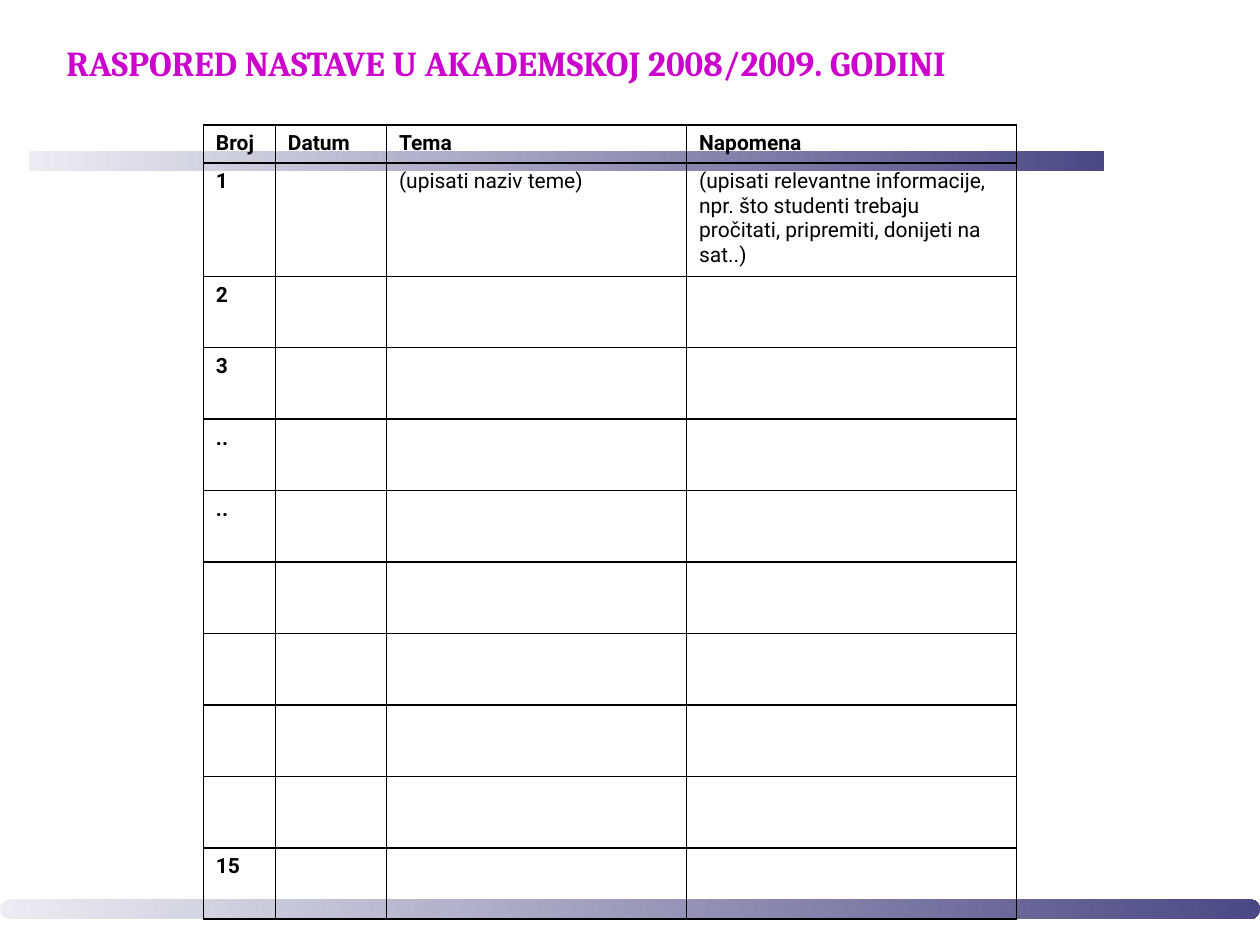
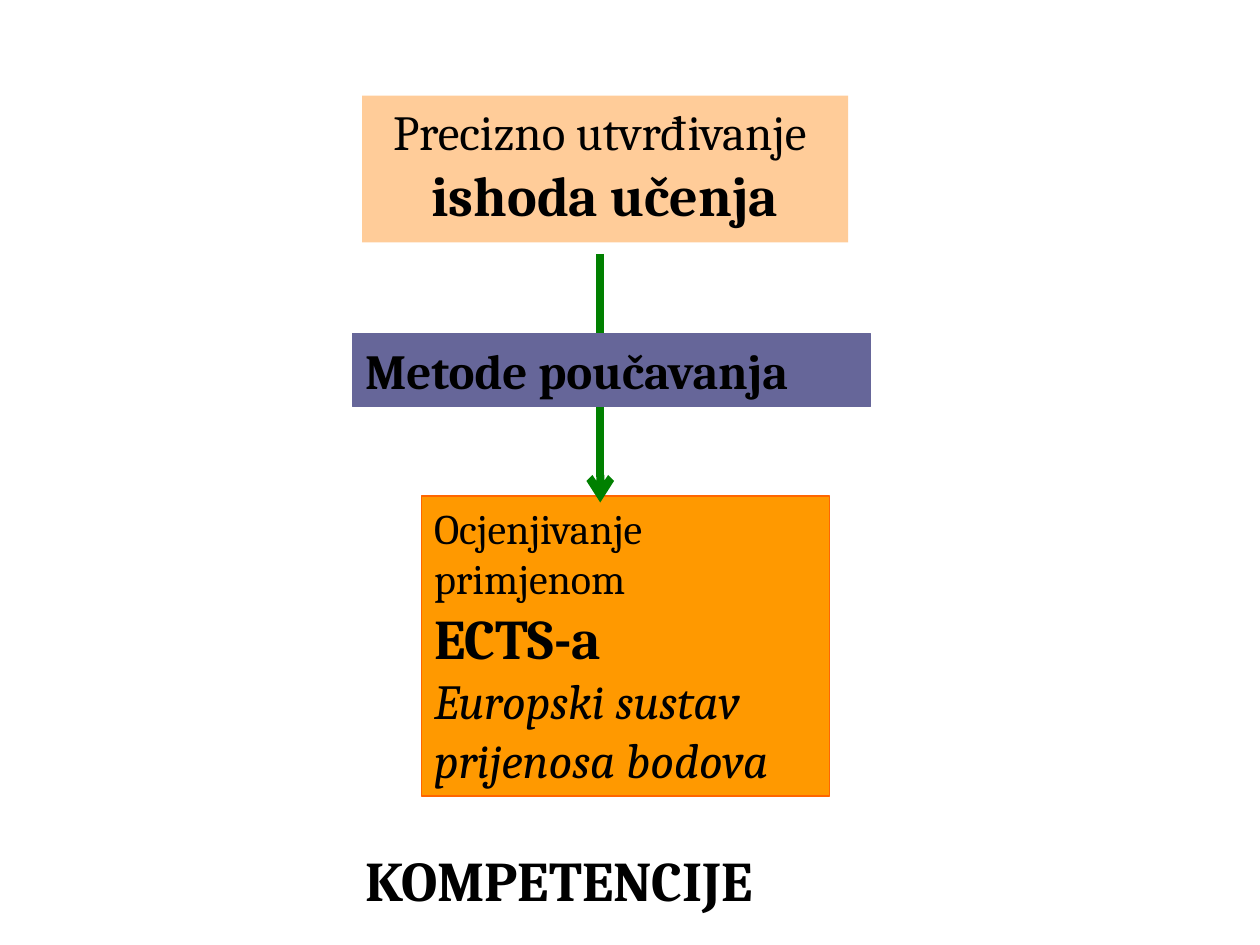
import pptx
import pptx.util
import pptx.dml.color
import pptx.enum.shapes
import pptx.enum.text
import pptx.oxml
import pptx.oxml.ns
from lxml import etree

Cm, Pt = pptx.util.Cm, pptx.util.Pt
RGB = pptx.dml.color.RGBColor
SHAPES = pptx.enum.shapes.MSO_SHAPE
ALIGN = pptx.enum.text.PP_ALIGN
ANCHOR = pptx.enum.text.MSO_ANCHOR
qn = pptx.oxml.ns.qn

BLACK = RGB(0, 0, 0)
MAGENTA = RGB(0xCC, 0x00, 0xCC)
BAND_LIGHT = RGB(0xED, 0xEC, 0xF2)
BAND_DARK = RGB(0x4C, 0x48, 0x84)
ORANGE = RGB(0xFF, 0x99, 0x00)
ORANGE_EDGE = RGB(0xFF, 0x66, 0x00)
PEACH = RGB(0xFF, 0xCC, 0x99)
VIOLET = RGB(0x66, 0x66, 0x99)
GREEN = RGB(0x00, 0x80, 0x00)
SERIF, SANS = "Cambria", "Roboto"

# Content: the schedule
TITLE = "RASPORED NASTAVE U AKADEMSKOJ 2008/2009. GODINI"
HEADER = ["Broj", "Datum", "Tema", "Napomena"]
FIRST_CLASS = ["1", "", "(upisati naziv teme)",
               "(upisati relevantne informacije, npr. što studenti trebaju "
               "pročitati, pripremiti, donijeti na sat..)"]
OTHER_NUMBERS = ["2", "3", "..", "..", "", "", "", "", "15"]
SCHEDULE = [HEADER, FIRST_CLASS] + [[n, "", "", ""] for n in OTHER_NUMBERS]
COL_WIDTHS = [1.45, 2.24, 6.05, 6.65]
ROW_HEIGHTS = [0.76, 2.27] + [1.44] * len(OTHER_NUMBERS)

# Content: the steps; a line is (text, size, bold, italic)
GRADING = [("Ocjenjivanje", 24, False, False), ("primjenom", 24, False, False),
           ("ECTS-a", 32, True, False), ("Europski sustav", 28, False, True),
           ("prijenosa bodova", 28, False, True)]
OUTCOMES = [("Precizno utvrđivanje ", 28, False, False),
            ("ishoda učenja", 32, True, False)]
METHODS = [("Metode poučavanja", 28, True, False)]
COMPETENCES = [("KOMPETENCIJE", 32, True, False)]


def write(s, lines, color=BLACK, align=ALIGN.LEFT, anchor=ANCHOR.TOP):
    tf = s.text_frame
    tf.word_wrap = align == ALIGN.LEFT
    tf.vertical_anchor = anchor
    for i, (text, size, bold, italic) in enumerate(lines):
        p = tf.add_paragraph() if i else tf.paragraphs[0]
        p.text = text
        p.alignment = align
        p.font.name, p.font.size = SERIF, Pt(size)
        p.font.bold, p.font.italic = bold, italic
        p.font.color.rgb = color


def text_box(slide, box, lines, **style):
    write(slide.shapes.add_textbox(*map(Cm, box)), lines, **style)


def step(slide, box, lines, fill, edge=None, align=ALIGN.LEFT):
    s = slide.shapes.add_shape(SHAPES.RECTANGLE, *map(Cm, box))
    s.shadow.inherit = False
    s.fill.solid()
    s.fill.fore_color.rgb = fill
    if edge is None:
        s.line.fill.background()
    else:
        s.line.color.rgb = edge
        s.line.width = Pt(0.75)
    write(s, lines, align=align)


def band(slide, kind, box):
    s = slide.shapes.add_shape(kind, *map(Cm, box))
    s.shadow.inherit = False
    s.fill.gradient()
    s.fill.gradient_angle = 0
    for stop, color in zip(s.fill.gradient_stops, (BAND_LIGHT, BAND_DARK)):
        stop.color.rgb = color
    s.line.fill.background()
    return s


def outline(cell):
    tcPr = cell._tc.get_or_add_tcPr()
    for side in ("lnL", "lnR", "lnT", "lnB"):
        ln = etree.SubElement(tcPr, qn("a:" + side), w=str(Pt(1)))
        fill = etree.SubElement(ln, qn("a:solidFill"))
        etree.SubElement(fill, qn("a:srgbClr"), val=str(BLACK))


def schedule_table(slide, left, top):
    table = slide.shapes.add_table(
        len(SCHEDULE), len(HEADER), Cm(left), Cm(top),
        Cm(sum(COL_WIDTHS)), Cm(sum(ROW_HEIGHTS))).table
    table.first_row = table.horz_banding = False
    for col, width in zip(table.columns, COL_WIDTHS):
        col.width = Cm(width)
    for r, (row, height) in enumerate(zip(SCHEDULE, ROW_HEIGHTS)):
        table.rows[r].height = Cm(height)
        for c, text in enumerate(row):
            cell = table.cell(r, c)
            outline(cell)
            cell.fill.background()
            p = cell.text_frame.paragraphs[0]
            p.text = text
            p.font.name, p.font.size = SANS, Pt(12)
            p.font.bold = r == 0 or c == 0
            p.font.color.rgb = BLACK


def arrow(slide, x, top, bottom):
    s = slide.shapes.add_connector(pptx.enum.shapes.MSO_CONNECTOR.STRAIGHT,
                                   Cm(x), Cm(top), Cm(x), Cm(bottom))
    s.line.color.rgb = GREEN
    s.line.width = Pt(4.5)
    etree.SubElement(s.line._get_or_add_ln(), qn("a:tailEnd"), type="arrow")
    etree.SubElement(s._element.spPr, qn("a:effectLst"))


def main():
    prs = pptx.Presentation()
    prs.slide_width, prs.slide_height = Cm(25.4), Cm(19.05)
    blank = prs.slide_layouts[6]

    # Class schedule
    slide = prs.slides.add_slide(blank)
    band(slide, SHAPES.RECTANGLE, (0.58, 3.05, 21.67, 0.4))
    footer = band(slide, SHAPES.ROUNDED_RECTANGLE, (0, 18.13, 25.4, 0.4))
    footer.adjustments[0] = 0.5
    text_box(slide, (1.09, 0.72, 22.73, 1.1), [(TITLE, 20, True, False)],
             color=MAGENTA, anchor=ANCHOR.MIDDLE)
    schedule_table(slide, 4.1, 2.52)

    # From learning outcomes to competences
    slide = prs.slides.add_slide(blank)
    step(slide, (8.5, 10, 8.22, 6.05), GRADING, ORANGE, ORANGE_EDGE)
    step(slide, (7.3, 1.93, 9.8, 2.96), OUTCOMES, PEACH, align=ALIGN.CENTER)
    arrow(slide, 12.1, 5.12, 10.13)
    step(slide, (7.11, 6.73, 10.44, 1.47), METHODS, VIOLET, VIOLET)
    text_box(slide, (7.11, 16.92, 10.46, 1.6), COMPETENCES)

    prs.save("out.pptx")


if __name__ == "__main__":
    main()
